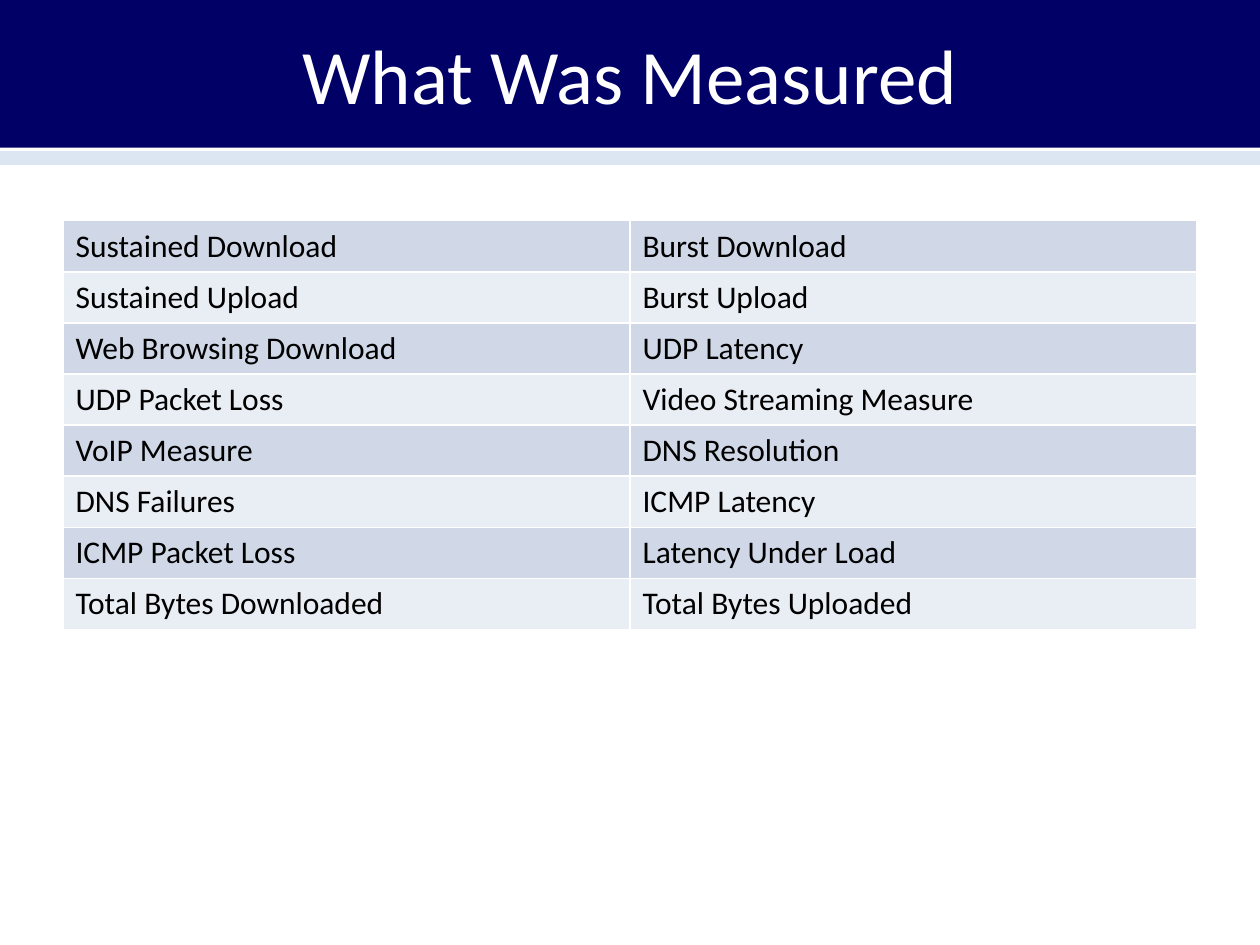
import pptx
import pptx.dml.color
import pptx.enum.shapes
import pptx.enum.text
import pptx.oxml
import pptx.oxml.ns
import pptx.util
from pptx.util import Cm

WIDTH, HEIGHT = 25.4, 19.05
MARGIN = 1.27
BANNER_HEIGHT = 3.18
ROW_HEIGHT = 1.03

MEASURES = [
    ("Sustained Download", "Burst Download"),
    ("Sustained Upload", "Burst Upload"),
    ("Web Browsing Download", "UDP Latency"),
    ("UDP Packet Loss", "Video Streaming Measure"),
    ("VoIP Measure", "DNS Resolution"),
    ("DNS Failures", "ICMP Latency"),
    ("ICMP Packet Loss", "Latency Under Load"),
    ("Total Bytes Downloaded", "Total Bytes Uploaded"),
]


def colour(value):
    return pptx.dml.color.RGBColor.from_string(value)


class SlideBuilder:
    font = "Calibri"
    navy, pale_blue = "000066", "DCE6F2"
    white, black = "FFFFFF", "000000"
    bands = ("D0D8E8", "E9EDF4")

    def __init__(self, slide):
        self.slide = slide

    def style(self, frame, size, ink):
        for paragraph in frame.paragraphs:
            for run in paragraph.runs:
                run.font.name = self.font
                run.font.size = pptx.util.Pt(size)
                run.font.color.rgb = colour(ink)

    def banner(self, left, top, width, height):
        banner = self.slide.shapes.add_shape(
            pptx.enum.shapes.MSO_SHAPE.RECTANGLE,
            Cm(left), Cm(top), Cm(width), Cm(height))
        banner.shadow.inherit = False
        banner.fill.solid()
        banner.fill.fore_color.rgb = colour(self.navy)
        banner.line.fill.background()

    def rule(self, y, weight):
        rule = self.slide.shapes.add_connector(
            pptx.enum.shapes.MSO_CONNECTOR.STRAIGHT,
            Cm(0), Cm(y), Cm(WIDTH), Cm(y))
        rule.line.color.rgb = colour(self.pale_blue)
        rule.line.width = pptx.util.Pt(weight)
        properties = rule.element.find(pptx.oxml.ns.qn("p:spPr"))
        properties.append(pptx.oxml.parse_xml(
            f'<a:effectLst {pptx.oxml.ns.nsdecls("a")}/>'))

    def title(self, wording, left, top, width, height):
        title = self.slide.shapes.add_textbox(
            Cm(left), Cm(top), Cm(width), Cm(height)).text_frame
        title.word_wrap = True
        title.vertical_anchor = pptx.enum.text.MSO_ANCHOR.MIDDLE
        title.text = wording
        title.paragraphs[0].alignment = pptx.enum.text.PP_ALIGN.CENTER
        self.style(title, 44, self.white)

    def borders(self, cell):
        properties = cell._tc.get_or_add_tcPr()
        for side in ("lnL", "lnR", "lnT", "lnB"):
            properties.append(pptx.oxml.parse_xml(
                f'<a:{side} {pptx.oxml.ns.nsdecls("a")} w="12700"><a:solidFill>'
                f'<a:srgbClr val="{self.white}"/></a:solidFill></a:{side}>'))

    def table(self, rows, left, top, width, row_height):
        table = self.slide.shapes.add_table(
            len(rows), len(rows[0]), Cm(left), Cm(top),
            Cm(width), Cm(row_height * len(rows))).table
        table.first_row = False
        for index, row in enumerate(rows):
            for column, wording in enumerate(row):
                cell = table.cell(index, column)
                self.borders(cell)
                cell.fill.solid()
                cell.fill.fore_color.rgb = colour(self.bands[index % 2])
                cell.text_frame.text = wording
                self.style(cell.text_frame, 18, self.black)


def main():
    deck = pptx.Presentation()
    deck.slide_width, deck.slide_height = Cm(WIDTH), Cm(HEIGHT)
    builder = SlideBuilder(deck.slides.add_slide(deck.slide_layouts[6]))
    content_width = WIDTH - 2 * MARGIN
    builder.banner(0, -0.2, WIDTH, BANNER_HEIGHT)
    builder.rule(BANNER_HEIGHT, 8)
    builder.title("What Was Measured", MARGIN, -0.1, content_width, BANNER_HEIGHT)
    builder.table(MEASURES, MARGIN, 4.45, content_width, ROW_HEIGHT)
    deck.save("out.pptx")


if __name__ == "__main__":
    main()
